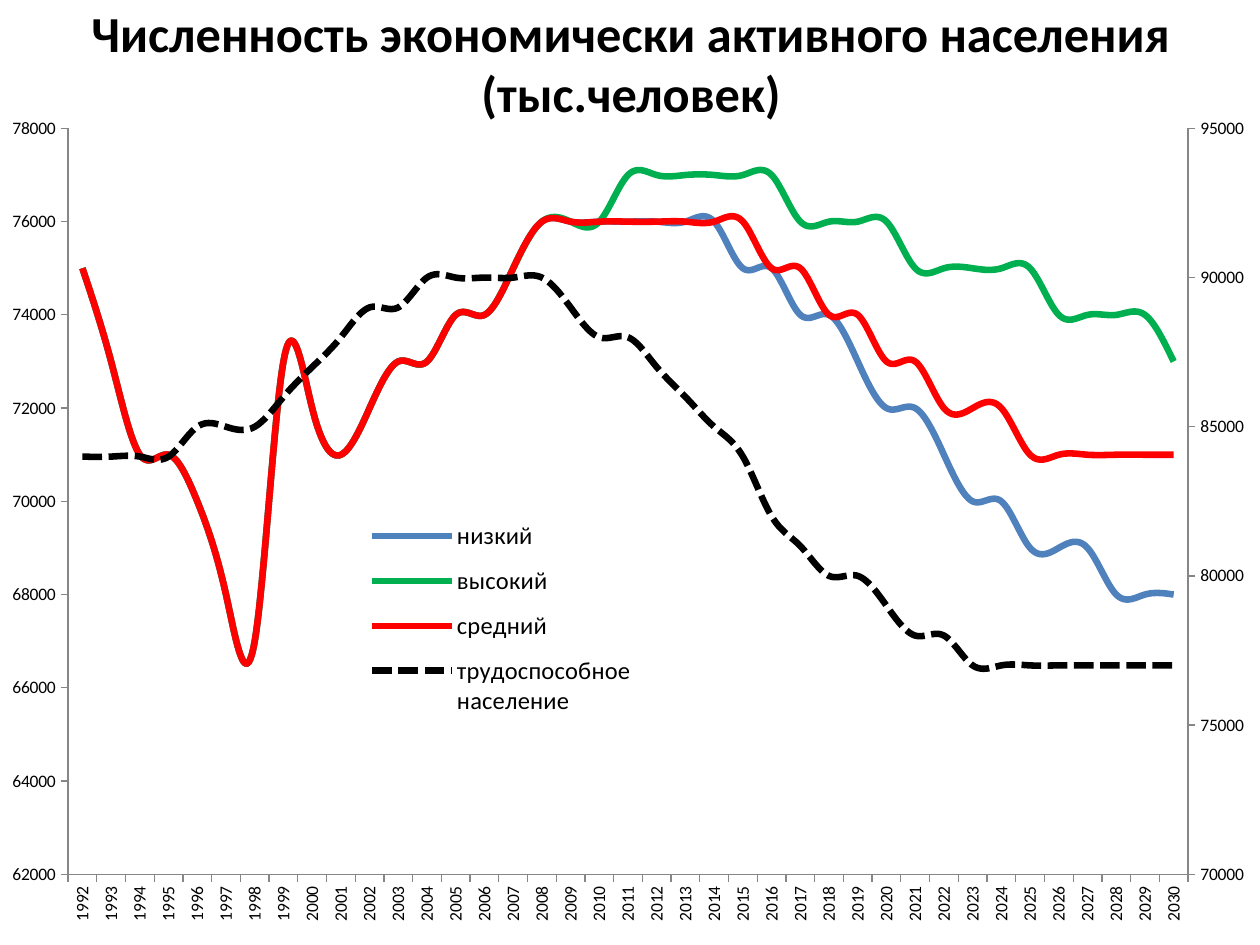
"""Build a slide with a two-axis line chart of the economically active population."""
from copy import deepcopy

from lxml import etree
from pptx import Presentation
from pptx.chart.data import CategoryChartData
from pptx.dml.color import RGBColor
from pptx.enum.chart import XL_CHART_TYPE, XL_LEGEND_POSITION, XL_MARKER_STYLE, XL_TICK_MARK
from pptx.enum.dml import MSO_LINE
from pptx.enum.text import MSO_ANCHOR, PP_ALIGN
from pptx.oxml.ns import qn
from pptx.util import Inches, Pt

TITLE = "Численность экономически активного населения (тыс.человек)"
FONT = "Calibri"
COLORS = {"text": "000000", "axis": "868686", "low": "4F81BD", "high": "00B050",
          "middle": "FF0000", "working_age": "000000"}
YEARS = range(1992, 2031)
THOUSAND = 1000
HISTORY = [75, 73, 71, 71, 70, 68, 67, 73, 72, 71, 72, 73, 73, 74, 74, 75, 76, 76, 76]
LOW = [76, 76, 76, 76, 75, 75, 74, 74, 73, 72, 72, 71, 70, 70, 69, 69, 69, 68, 68, 68]
HIGH = [77, 77, 77, 77, 77, 77, 76, 76, 76, 76, 75, 75, 75, 75, 75, 74, 74, 74, 74, 73]
MIDDLE = [76, 76, 76, 76, 76, 75, 75, 74, 74, 73, 73, 72, 72, 72, 71, 71, 71, 71, 71, 71]
WORKING_AGE = [84, 84, 84, 84, 85, 85, 85, 86, 87, 88, 89, 89, 90, 90, 90, 90, 90, 89, 88,
               88, 87, 86, 85, 84, 82, 81, 80, 80, 79, 78, 78, 77, 77, 77, 77, 77, 77, 77, 77]
SERIES = [("низкий", "low", HISTORY + LOW),
          ("высокий", "high", HISTORY + HIGH),
          ("средний", "middle", HISTORY + MIDDLE),
          ("трудоспособное население", "working_age", WORKING_AGE)]
LEFT_SCALE = (62000, 78000, 2000)
RIGHT_SCALE = (70000, 95000, 5000)
CHART_BOX = (-0.16, 0.86, 10.16, 6.64)
PLOT_BOX = (0.54, 1.02, 8.89, 5.92)
LEGEND_BOX = (2.86, 4.02, 2.24, 1.78)


def rgb(name):
    return RGBColor.from_string(COLORS[name])


def style_font(font, size):
    font.name = FONT
    font.size = Pt(size)
    font.color.rgb = rgb("text")


def style_axis(axis):
    axis.has_major_gridlines = False
    axis.major_tick_mark = XL_TICK_MARK.OUTSIDE
    axis.minor_tick_mark = XL_TICK_MARK.NONE
    axis.format.line.color.rgb = rgb("axis")
    axis.format.line.width = Pt(0.75)
    style_font(axis.tick_labels.font, 10)


def set_scale(axis, scale):
    axis.minimum_scale, axis.maximum_scale, axis.major_unit = scale


def make_layout(box, inner=False):
    """Turn a box in slide inches into a layout relative to the chart."""
    left, top, width, height = box
    chart_left, chart_top, chart_width, chart_height = CHART_BOX
    fractions = ((left - chart_left) / chart_width, (top - chart_top) / chart_height,
                 width / chart_width, height / chart_height)
    layout = etree.Element(qn("c:layout"))
    manual = etree.SubElement(layout, qn("c:manualLayout"))
    settings = [("layoutTarget", "inner")] if inner else []
    settings += [("xMode", "edge"), ("yMode", "edge")]
    settings += zip("xywh", fractions)
    for tag, value in settings:
        etree.SubElement(manual, qn(f"c:{tag}")).set("val", str(value))
    return layout


def add_right_axis(chart, scale):
    """Move the last series to a second line group with its own value axis."""
    plot_area = chart.plots[0]._element.getparent()
    left_lines = plot_area.find(qn("c:lineChart"))
    years_axis, left_axis = chart.category_axis._element, chart.value_axis._element
    right_lines = deepcopy(left_lines)
    left_lines.remove(left_lines.findall(qn("c:ser"))[-1])
    for series in right_lines.findall(qn("c:ser"))[:-1]:
        right_lines.remove(series)
    left_lines.addnext(right_lines)

    hidden_axis = deepcopy(years_axis)
    set_scale(chart.value_axis, scale)
    right_axis = deepcopy(left_axis)
    set_scale(chart.value_axis, LEFT_SCALE)
    left_axis.addnext(right_axis)
    right_axis.addnext(hidden_axis)
    ids = {years_axis.find(qn("c:axId")).get("val"): "50010",
           left_axis.find(qn("c:axId")).get("val"): "50020"}
    for part in (right_lines, right_axis, hidden_axis):
        for tag in ("c:axId", "c:crossAx"):
            for reference in part.findall(qn(tag)):
                reference.set("val", ids[reference.get("val")])
    hidden_axis.find(qn("c:delete")).set("val", "1")
    right_axis.find(qn("c:axPos")).set("val", "r")
    right_axis.find(qn("c:crosses")).set("val", "max")


def add_title(slide):
    box = slide.shapes.add_textbox(Inches(0.51), Inches(0), Inches(9), Inches(0.99))
    frame = box.text_frame
    frame.word_wrap = True
    frame.vertical_anchor = MSO_ANCHOR.MIDDLE
    paragraph = frame.paragraphs[0]
    paragraph.alignment = PP_ALIGN.CENTER
    run = paragraph.add_run()
    run.text = TITLE
    style_font(run.font, 28.8)
    run.font.bold = True


def add_population_chart(slide):
    data = CategoryChartData(number_format="General")
    data.categories = [str(year) for year in YEARS]
    for name, _, values in SERIES:
        data.add_series(name, [value * THOUSAND for value in values])
    chart = slide.shapes.add_chart(XL_CHART_TYPE.LINE, *map(Inches, CHART_BOX), data).chart
    chart.has_title = False
    style_font(chart.font, 10)

    for series, (_, color, _) in zip(chart.plots[0].series, SERIES):
        series.smooth = True
        series.marker.style = XL_MARKER_STYLE.NONE
        series.format.line.color.rgb = rgb(color)
        series.format.line.width = Pt(3.75)
        if color == "working_age":
            series.format.line.dash_style = MSO_LINE.SQUARE_DOT

    style_axis(chart.category_axis)
    style_axis(chart.value_axis)
    labels = chart.category_axis._element.find(qn("c:txPr"))
    labels.find(qn("a:bodyPr")).set("rot", "-5400000")
    left_axis = chart.value_axis._element
    if left_axis.find(qn("c:crossBetween")) is None:
        between = etree.Element(qn("c:crossBetween"))
        between.set("val", "between")
        left_axis.find(qn("c:crosses")).addnext(between)

    chart.has_legend = True
    chart.legend.position = XL_LEGEND_POSITION.RIGHT
    chart.legend.include_in_layout = False
    style_font(chart.legend.font, 14)
    legend = chart.legend._element
    for old in legend.findall(qn("c:layout")):
        legend.remove(old)
    legend.find(qn("c:legendPos")).addnext(make_layout(LEGEND_BOX))

    add_right_axis(chart, RIGHT_SCALE)
    plot_area = left_axis.getparent()
    for old in plot_area.findall(qn("c:layout")):
        plot_area.remove(old)
    plot_area.insert(0, make_layout(PLOT_BOX, inner=True))


def main():
    presentation = Presentation()
    presentation.slide_width, presentation.slide_height = Inches(10), Inches(7.5)
    slide = presentation.slides.add_slide(presentation.slide_layouts[6])
    add_title(slide)
    add_population_chart(slide)
    presentation.save("out.pptx")


if __name__ == "__main__":
    main()
